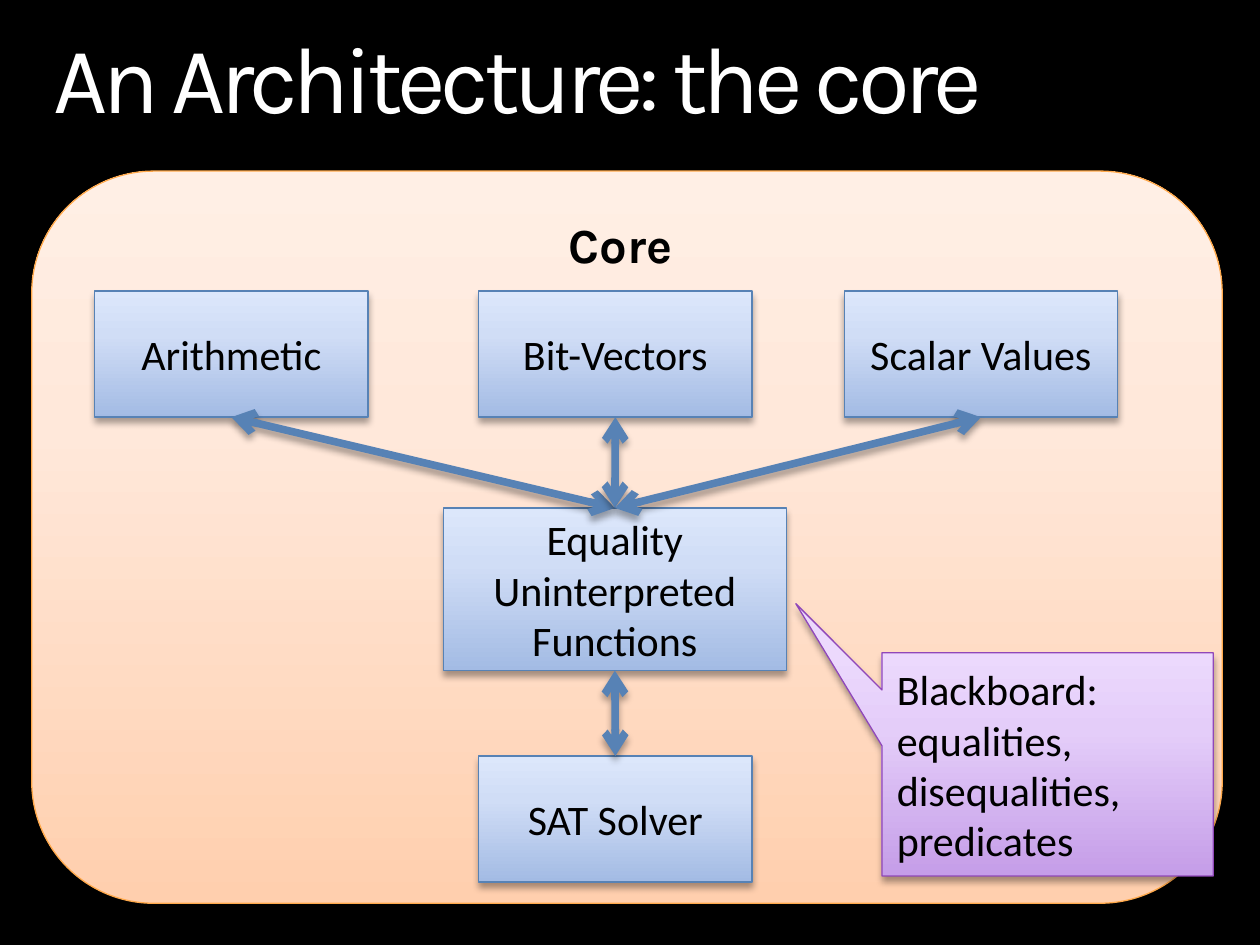
from dataclasses import dataclass

import pptx
import pptx.dml.color
import pptx.enum.shapes
import pptx.enum.text
import pptx.oxml
import pptx.oxml.ns
import pptx.util

Cm = pptx.util.Cm
Pt = pptx.util.Pt
SHAPES = pptx.enum.shapes.MSO_SHAPE
ALIGN = pptx.enum.text.PP_ALIGN
ANCHOR = pptx.enum.text.MSO_ANCHOR
NAMESPACE = pptx.oxml.ns.nsdecls("a")

COLORS = {
    "background": "000000",
    "title": "FFFFFF",
    "text": "000000",
    "core_line": "FFA94B",
    "module_line": "5782B5",
    "note_line": "9047B9",
}
# Gradient colours from the bottom of a shape to its top
GRADIENTS = {
    "core": ("FFCFAE", "FFE8DA", "FFEFE5"),
    "module": ("A3BBE4", "D0DDF6", "DCE7FB"),
    "note": ("C59DE8", "E4CDF9", "ECD9FD"),
}
GRADIENT_STOPS = (0, 65, 100)
TOP_SITE, BOTTOM_SITE = 0, 2


@dataclass
class Panel:
    left: float
    top: float
    width: float
    height: float
    lines: tuple[str, ...]
    style: str = "module"
    outline: SHAPES = SHAPES.RECTANGLE
    align: ALIGN = ALIGN.CENTER
    anchor: ANCHOR = ANCHOR.MIDDLE
    font: str = "Calibri"
    size: float = 24
    bold: bool = False


def module(left: float, top: float, label: str) -> Panel:
    return Panel(left, top, 5.51, 2.54, (label,))


def rgb(name: str) -> pptx.dml.color.RGBColor:
    return pptx.dml.color.RGBColor.from_string(COLORS[name])


def add_shadow(shape) -> None:
    shape._element.spPr.append(pptx.oxml.parse_xml(
        f'<a:effectLst {NAMESPACE}><a:outerShdw blurRad="{Pt(4)}" dist="{Pt(3)}" '
        'dir="5400000" rotWithShape="0"><a:srgbClr val="000000">'
        '<a:alpha val="35000"/></a:srgbClr></a:outerShdw></a:effectLst>'))


def fill_gradient(shape, colors: tuple[str, ...]) -> None:
    stops = "".join(
        f'<a:gs pos="{stop * 1000}"><a:srgbClr val="{color}"/></a:gs>'
        for stop, color in zip(GRADIENT_STOPS, colors))
    shape._element.spPr.find(pptx.oxml.ns.qn("a:prstGeom")).addnext(
        pptx.oxml.parse_xml(
            f'<a:gradFill {NAMESPACE} rotWithShape="1"><a:gsLst>{stops}</a:gsLst>'
            '<a:lin ang="16200000" scaled="0"/></a:gradFill>'))


def add_run(para, text: str, font: str, size: float, color: str, bold: bool = False):
    run = para.add_run()
    run.text = text
    run.font.name = font
    run.font.size = Pt(size)
    run.font.bold = bold
    run.font.color.rgb = rgb(color)
    return run


def set_margins(frame, across: float, down: float) -> None:
    frame.word_wrap = True
    frame.margin_left = frame.margin_right = Cm(across)
    frame.margin_top = frame.margin_bottom = Cm(down)


def add_title(page, text: str) -> None:
    box = page.shapes.add_textbox(Cm(1.07), Cm(0.64), Cm(23.29), Cm(1.85))
    set_margins(box.text_frame, 0, 0)
    para = box.text_frame.paragraphs[0]
    para.line_spacing = 0.9
    run = add_run(para, text, "Karla", 54, "title")
    run.font._element.set("spc", "-300")


def add_panel(page, panel: Panel):
    shape = page.shapes.add_shape(
        panel.outline, Cm(panel.left), Cm(panel.top), Cm(panel.width), Cm(panel.height))
    fill_gradient(shape, GRADIENTS[panel.style])
    shape.line.color.rgb = rgb(f"{panel.style}_line")
    shape.line.width = Pt(0.75)
    add_shadow(shape)

    frame = shape.text_frame
    set_margins(frame, 0.3, 0.15)
    frame.vertical_anchor = panel.anchor
    for index, line in enumerate(panel.lines):
        para = frame.add_paragraph() if index else frame.paragraphs[0]
        para.alignment = panel.align
        add_run(para, line, panel.font, panel.size, "text", panel.bold)
    return shape


def add_link(page, upper, lower) -> None:
    """Join the bottom of one module to the top of another, arrows at both ends."""
    link = page.shapes.add_connector(
        pptx.enum.shapes.MSO_CONNECTOR.STRAIGHT, 0, 0, 0, 0)
    link.begin_connect(upper, BOTTOM_SITE)
    link.end_connect(lower, TOP_SITE)
    link.line.color.rgb = rgb("module_line")
    link.line.width = Pt(4.33)
    for end in ("headEnd", "tailEnd"):
        link.line._get_or_add_ln().append(
            pptx.oxml.parse_xml(f'<a:{end} {NAMESPACE} type="arrow"/>'))
    add_shadow(link)


def main() -> None:
    deck = pptx.Presentation()
    deck.slide_width, deck.slide_height = Cm(25.4), Cm(19.05)
    page = deck.slides.add_slide(deck.slide_layouts[6])
    page.background.fill.solid()
    page.background.fill.fore_color.rgb = rgb("background")

    # Core area and title
    add_panel(page, Panel(
        0.64, 3.45, 24, 14.76, ("Core ",), "core", SHAPES.ROUNDED_RECTANGLE,
        anchor=ANCHOR.TOP, font="Karla", size=28, bold=True))
    add_title(page, "An Architecture: the core")

    # Modules
    solver = add_panel(page, module(9.65, 15.24, "SAT Solver"))
    equality = add_panel(page, Panel(
        8.94, 10.24, 6.91, 3.28, ("Equality", "Uninterpreted Functions")))
    theories = [
        add_panel(page, module(left, 5.87, label))
        for left, label in (
            (1.91, "Arithmetic"), (9.65, "Bit-Vectors"), (17.02, "Scalar Values"))
    ]

    # Links between modules
    for theory in theories:
        add_link(page, theory, equality)
    add_link(page, equality, solver)

    # Blackboard callout
    note = add_panel(page, Panel(
        17.78, 13.16, 6.68, 4.5,
        ("Blackboard:", "equalities, disequalities,", "predicates"),
        "note", SHAPES.RECTANGULAR_CALLOUT, ALIGN.LEFT))
    note.adjustments[0], note.adjustments[1] = -0.76, -0.72

    deck.save("out.pptx")


if __name__ == "__main__":
    main()
